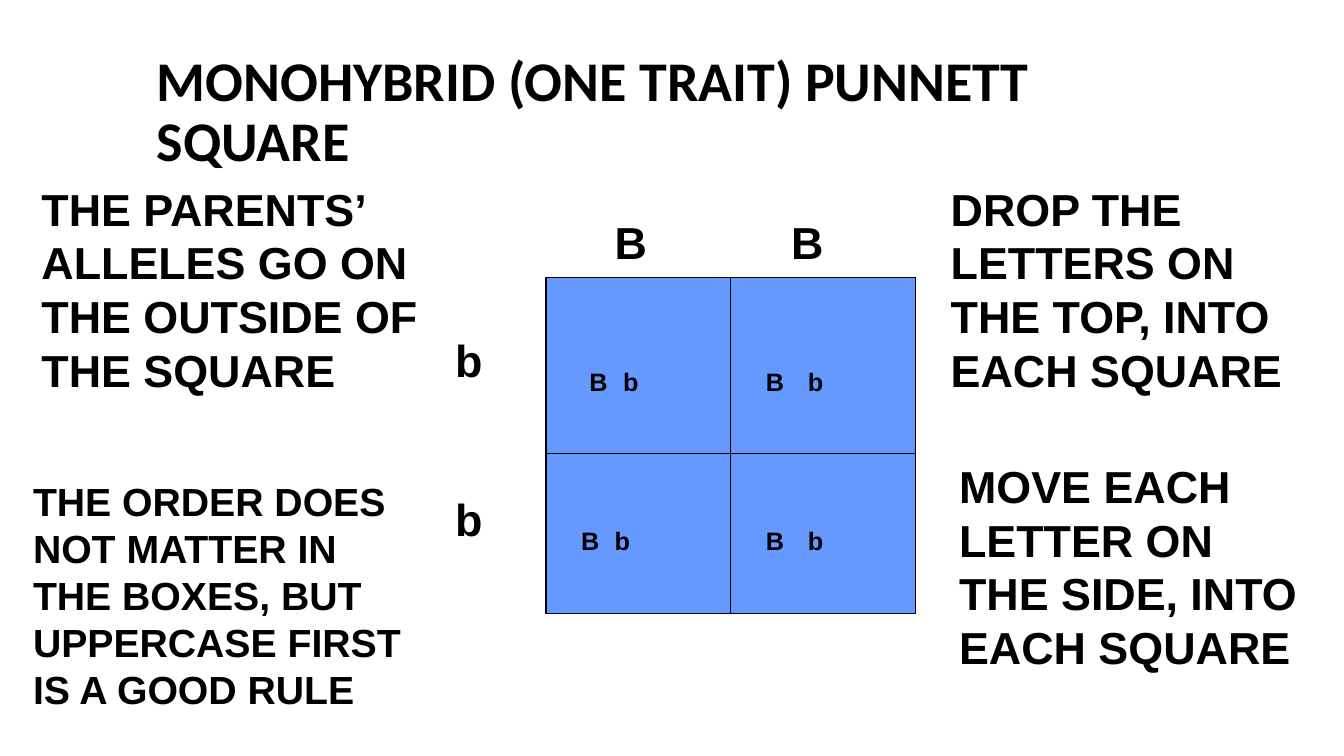
from pptx import Presentation
from pptx import util as u
from pptx.dml.color import RGBColor
from pptx.enum import shapes, text
from lxml import etree

BLACK = RGBColor(0x00, 0x00, 0x00)
BLUE = RGBColor(0x66, 0x99, 0xFF)
A = "http://schemas.openxmlformats.org/drawingml/2006/main"

prs = Presentation()
prs.slide_width, prs.slide_height = u.Inches(13.33), u.Inches(7.5)
s = prs.slides.add_slide(prs.slide_layouts[6])

# Grid of 160 columns and 90 rows
COL, ROW = prs.slide_width / 160, prs.slide_height / 90


def add_text(words, col, row, cols, rows, size, font="Arial"):
    box = s.shapes.add_textbox(int(col * COL), int(row * ROW), int(cols * COL), int(rows * ROW))
    tf = box.text_frame
    tf.word_wrap = True
    tf.text = words
    r = tf.paragraphs[0].runs[0]
    r.font.name, r.font.size, r.font.bold = font, u.Pt(size), True
    r.font.color.rgb = BLACK
    return tf


def add_line(col1, row1, col2, row2):
    line = s.shapes.add_connector(shapes.MSO_CONNECTOR.STRAIGHT, int(col1 * COL), int(row1 * ROW),
                                  int(col2 * COL), int(row2 * ROW))
    line.line.color.rgb, line.line.width = BLACK, u.Pt(0.75)
    etree.SubElement(line._element.spPr, f"{{{A}}}effectLst")


# Title
tf = add_text("MONOHYBRID (ONE TRAIT) PUNNETT SQUARE", 17.5, 4.8, 128.8, 17.4, 40, "Calibri")
tf.vertical_anchor = text.MSO_ANCHOR.MIDDLE
tf.paragraphs[0].line_spacing = 0.9

# Punnett square with its dividers and right edge
left, top, right, bottom = 65, 33, 109, 73
square = s.shapes.add_shape(shapes.MSO_SHAPE.RECTANGLE, int(left * COL), int(top * ROW),
                            int((right - left) * COL), int((bottom - top) * ROW))
square.shadow.inherit = False
square.fill.solid()
square.fill.fore_color.rgb = BLUE
square.line.color.rgb, square.line.width = BLACK, u.Pt(0.75)
add_line(87, top, 87, bottom)
add_line(left, 54, right, 54)
add_line(right, 71, right, 37)

# Parents' alleles outside the square
for col, cols in ((72, 9), (93, 16)):
    add_text("B", col, 25, cols, 7.5, 32)
for row, cols in ((39, 9), (58, 5)):
    add_text("b", 53, row, cols, 7.5, 32)

# Offspring alleles: row, column of B, column of b
for row, col_upper, col_lower in ((43, 69, 73), (43, 90, 95), (62, 68, 72), (62, 90, 95)):
    add_text("B", col_upper, row, 5, 4.8, 18)
    add_text("b", col_lower, row, 7, 4.8, 18)

# Explanations
for words, col, row, cols, rows, size in (
    ("THE PARENTS’ ALLELES GO ON THE OUTSIDE OF THE SQUARE", 3.75, 21, 47.25, 27, 32),
    ("DROP THE LETTERS ON THE TOP, INTO EACH SQUARE", 112, 21, 42.25, 27, 32),
    ("MOVE EACH LETTER ON THE SIDE, INTO EACH SQUARE", 113, 54, 43, 27, 32),
    ("THE ORDER DOES NOT MATTER IN THE BOXES, BUT UPPERCASE FIRST IS A GOOD RULE",
     2.75, 56.25, 46.25, 29.5, 28),
):
    add_text(words, col, row, cols, rows, size)

prs.save("out.pptx")
